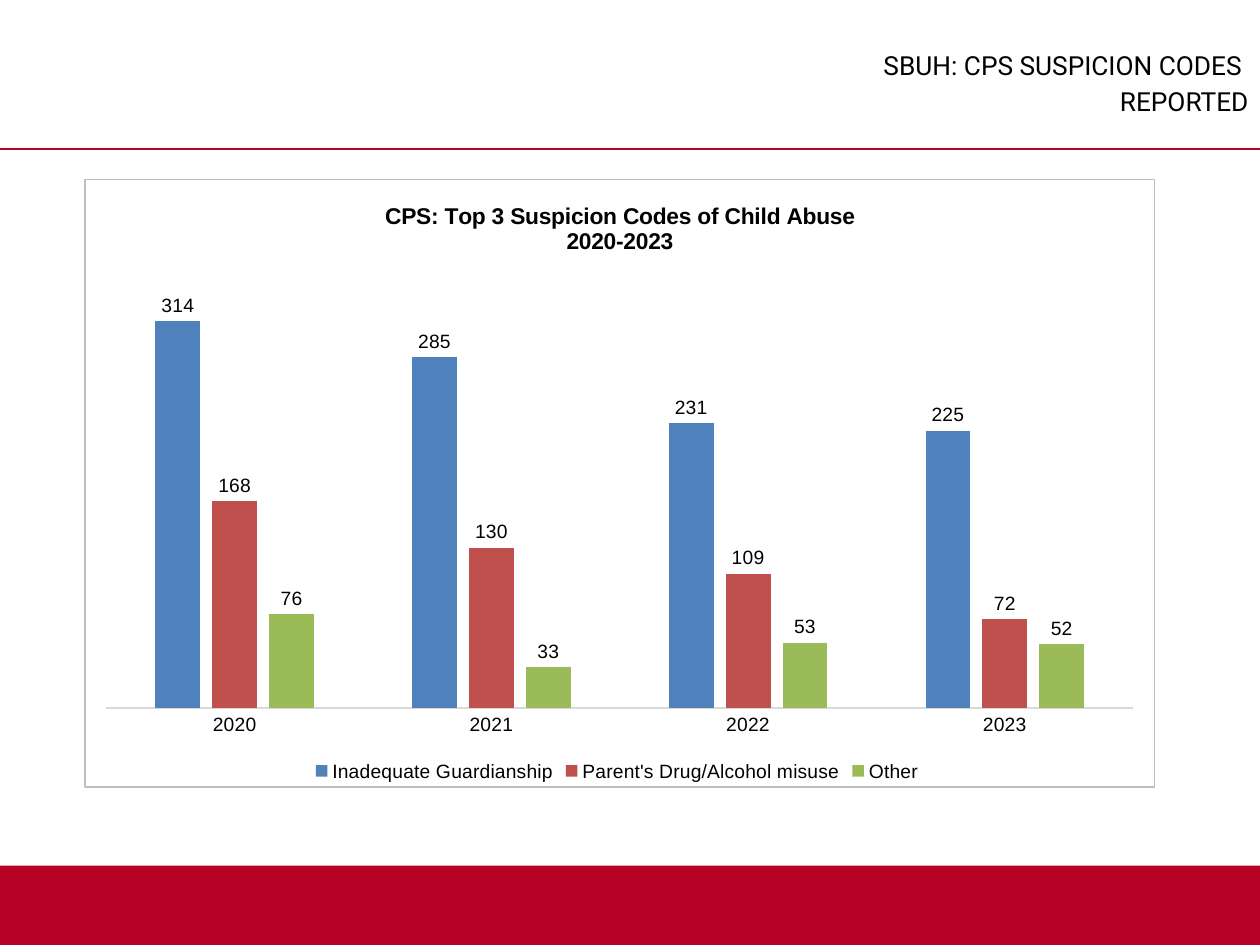
from lxml.etree import SubElement
from pptx import Presentation
from pptx.chart.data import CategoryChartData
from pptx.dml.color import RGBColor
from pptx.enum.chart import (XL_CHART_TYPE, XL_LABEL_POSITION,
                             XL_LEGEND_POSITION, XL_TICK_MARK)
from pptx.enum.shapes import MSO_CONNECTOR, MSO_SHAPE
from pptx.enum.text import MSO_ANCHOR, PP_ALIGN
from pptx.oxml import parse_xml
from pptx.oxml.ns import nsdecls, qn
from pptx.util import Cm, Pt

RED = RGBColor(0xB6, 0x02, 0x25)
BLACK = RGBColor(0, 0, 0)
PALE = RGBColor(0xD9, 0xD9, 0xD9)
BLUE = RGBColor(0x4F, 0x81, 0xBD)
BRICK = RGBColor(0xC0, 0x50, 0x4D)
GREEN = RGBColor(0x9B, 0xBB, 0x59)
BORDER = RGBColor(0xBF, 0xBF, 0xBF)

HEADING = ["SBUH: CPS SUSPICION CODES ", "REPORTED"]
TITLE = ["CPS: Top 3 Suspicion Codes of Child Abuse", "2020-2023"]
YEARS = ["2020", "2021", "2022", "2023"]
SERIES = [
    ("Inadequate Guardianship", (314, 285, 231, 225), BLUE),
    ("Parent's Drug/Alcohol misuse", (168, 130, 109, 72), BRICK),
    ("Other ", (76, 33, 53, 52), GREEN),
]
PLOT = {"x": 0.02, "y": 0.16, "w": 0.96, "h": 0.71}  # shares of the chart

WIDTH, HEIGHT = Cm(25.4), Cm(19.05)
BAND = Cm(1.6)
RULE = Cm(3.01)


def style(font, size, name="Arial", bold=False):
    font.size, font.name, font.bold = Pt(size), name, bold
    font.color.rgb = BLACK


def add_frame(slide):
    """Add the red band at the foot and the rule under the heading."""
    band = slide.shapes.add_shape(
        MSO_SHAPE.RECTANGLE, 0, HEIGHT - BAND, WIDTH, BAND)
    band.shadow.inherit = False
    band.fill.solid()
    band.fill.fore_color.rgb = RED
    band.line.fill.background()
    rule = slide.shapes.add_connector(
        MSO_CONNECTOR.STRAIGHT, 0, RULE, WIDTH, RULE)
    rule.line.color.rgb = RED
    rule.line.width = Pt(1)
    SubElement(rule._element.spPr, qn("a:effectLst"))


def add_heading(slide):
    box = slide.shapes.add_textbox(Cm(12.27), Cm(0.86), Cm(12.9), Cm(1.07))
    frame = box.text_frame
    frame.word_wrap = True
    frame.vertical_anchor = MSO_ANCHOR.TOP
    frame.margin_left = frame.margin_right = 0
    frame.text = "\n".join(HEADING)
    for i, para in enumerate(frame.paragraphs):
        para.alignment = PP_ALIGN.RIGHT
        para.space_before = Pt(3 if i else 0)
        style(para.font, 15, "Roboto")


def place_plot(chart):
    """Fix the inner plot area at the shares in PLOT."""
    area = chart._chartSpace.chart.plotArea
    for old in area.findall(qn("c:layout")):
        area.remove(old)
    layout = parse_xml(f"<c:layout {nsdecls('c')}/>")
    area.insert(0, layout)
    manual = SubElement(layout, qn("c:manualLayout"))
    parts = {"layoutTarget": "inner", "xMode": "edge", "yMode": "edge", **PLOT}
    for tag, val in parts.items():
        SubElement(manual, qn(f"c:{tag}")).set("val", str(val))


def add_border(chart):
    chart._chartSpace.chart.addnext(parse_xml(
        f'<c:spPr {nsdecls("c", "a")}><a:ln w="{Pt(0.75)}"><a:solidFill>'
        f'<a:srgbClr val="{BORDER}"/></a:solidFill></a:ln></c:spPr>'))


def add_bars(slide):
    data = CategoryChartData()
    data.categories = YEARS
    for name, vals, _ in SERIES:
        data.add_series(name, vals)
    chart = slide.shapes.add_chart(
        XL_CHART_TYPE.COLUMN_CLUSTERED,
        Cm(1.7), Cm(3.61), Cm(21.59), Cm(12.27), data).chart
    style(chart.font, 11)

    chart.has_title = True
    title = chart.chart_title
    title.include_in_layout = False
    title.text_frame.text = "\n".join(TITLE)
    for para in title.text_frame.paragraphs:
        style(para.font, 13, bold=True)

    chart.has_legend = True
    chart.legend.position = XL_LEGEND_POSITION.BOTTOM
    chart.legend.include_in_layout = False
    style(chart.legend.font, 11)

    years = chart.category_axis
    years.major_tick_mark = XL_TICK_MARK.NONE
    years.format.line.color.rgb = PALE
    years.format.line.width = Pt(0.75)
    style(years.tick_labels.font, 11)
    scale = chart.value_axis
    scale.minimum_scale, scale.maximum_scale = 0, 350
    scale.has_major_gridlines = False
    scale.visible = False

    plot = chart.plots[0]
    plot.vary_by_categories = False
    plot.gap_width, plot.overlap = 219, -27
    for series, (_, _, color) in zip(plot.series, SERIES):
        series.format.fill.solid()
        series.format.fill.fore_color.rgb = color
        labels = series.data_labels
        labels.show_value = True
        labels.position = XL_LABEL_POSITION.OUTSIDE_END
        style(labels.font, 11)
    place_plot(chart)
    add_border(chart)


def main():
    deck = Presentation()
    deck.slide_width, deck.slide_height = WIDTH, HEIGHT
    slide = deck.slides.add_slide(deck.slide_layouts[6])
    add_frame(slide)
    add_heading(slide)
    add_bars(slide)
    deck.save("out.pptx")


if __name__ == "__main__":
    main()
